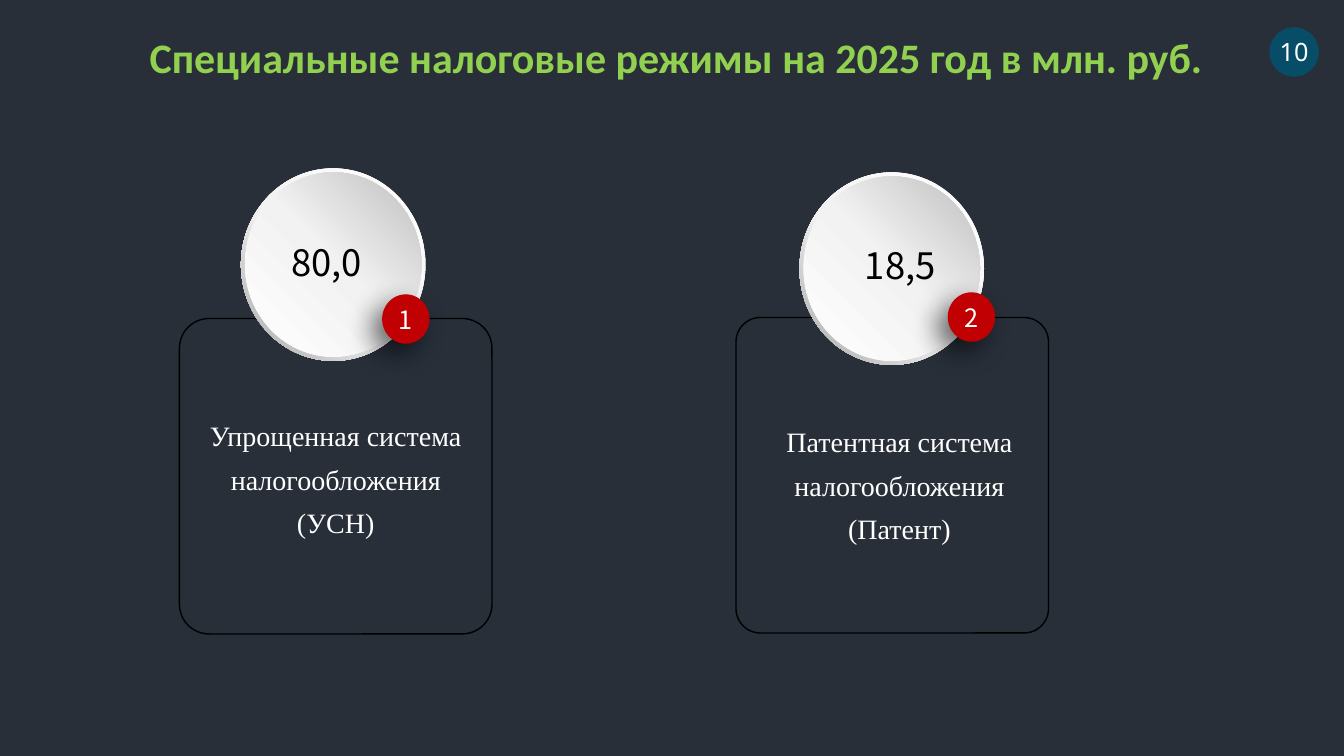
from lxml import etree
from pptx import Presentation
from pptx.dml.color import RGBColor
from pptx.enum.shapes import MSO_SHAPE as Shape
from pptx.enum.text import MSO_ANCHOR as Anchor, MSO_AUTO_SIZE as AutoSize, PP_ALIGN as Align
from pptx.oxml import parse_xml
from pptx.oxml.ns import nsdecls, qn
from pptx.util import Inches, Pt

# Content: each card has its figure, label and part positions (left, top) in inches
TITLE = "Специальные налоговые режимы на 2025 год в млн. руб."
PAGE_NUMBER = "10"
CARDS = [
    {"number": "1", "value": "80,0",
     "label": "Упрощенная система налогообложения (УСН)",
     "frame": (1.78, 3.16), "radius": 0.095, "medal": (2.39, 1.67),
     "badge": (3.79, 2.92), "figure": (2.79, 2.33), "caption": (1.94, 4.05)},
    {"number": "2", "value": "18,5",
     "label": "Патентная система налогообложения (Патент)",
     "frame": (7.3, 3.15), "radius": 0.078, "medal": (7.93, 1.71),
     "badge": (9.4, 2.9), "figure": (8.48, 2.36), "caption": (7.53, 4.11)},
]

# Sizes shared by both cards (width, height)
FRAME = (3.1, 3.13)
MEDAL = (1.83, 1.91)
RIM = 0.04
BADGE = (0.47, 0.49)
FIGURE = (1.04, 0.54)
CAPTION = (2.78, 1.31)

# Colours and gradients
BACKGROUND = RGBColor(0x28, 0x2F, 0x39)
GREEN = RGBColor(0x92, 0xD0, 0x50)
RED = RGBColor(0xC0, 0x00, 0x02)
TEAL = RGBColor(0x07, 0x4D, 0x67)
WHITE = RGBColor(0xFF, 0xFF, 0xFF)
BLACK = RGBColor(0x00, 0x00, 0x00)
PALE = RGBColor(0xF2, 0xF2, 0xF2)
SILVER = RGBColor(0xBF, 0xBF, 0xBF)
GREY = RGBColor(0xA6, 0xA6, 0xA6)
RIM_GRADIENT = ([(0, WHITE), (55, PALE), (100, GREY)], 135)
FACE_GRADIENT = ([(0, WHITE), (51, PALE), (100, SILVER)], 315)


def box_of(position, size):
    return [Inches(length) for length in (*position, *size)]


def add_plain(shapes, kind, position, size, fill=None):
    shape = shapes.add_shape(kind, *box_of(position, size))
    shape.shadow.inherit = False
    shape.line.fill.background()
    if fill is None:
        shape.fill.background()
    else:
        shape.fill.solid()
        shape.fill.fore_color.rgb = fill
    return shape


def set_gradient(shape, stops, angle):
    marks = "".join(f'<a:gs pos="{share * 1000}"><a:srgbClr val="{color}"/></a:gs>'
                    for share, color in stops)
    gradient = parse_xml(f'<a:gradFill {nsdecls("a")} rotWithShape="1"><a:gsLst>{marks}</a:gsLst>'
                         f'<a:lin ang="{angle * 60000}" scaled="0"/></a:gradFill>')
    properties = shape.fill._xPr
    properties.replace(properties.find(qn("a:noFill")), gradient)


def add_shadow(shape):
    effects = shape._element.spPr.find(qn("a:effectLst"))
    shadow = etree.SubElement(effects, qn("a:outerShdw"), blurRad=str(Pt(20)), dist=str(Pt(10)),
                              dir=str(135 * 60000), algn="tr", rotWithShape="0")
    color = etree.SubElement(shadow, qn("a:srgbClr"), val=str(BLACK))
    etree.SubElement(color, qn("a:alpha"), val="60000")


def write(shape, text, font, size, color, align=Align.CENTER, anchor=Anchor.MIDDLE,
          inset=0.0, spacing=None, bold=False):
    frame = shape.text_frame
    frame.text = text
    frame.word_wrap = True
    frame.auto_size = AutoSize.NONE
    frame.vertical_anchor = anchor
    frame.margin_left = frame.margin_right = Inches(inset)
    frame.margin_top = frame.margin_bottom = Inches(inset / 2)
    para = frame.paragraphs[0]
    para.alignment = align
    para.line_spacing = spacing
    span = para.runs[0]
    span.font.name = font
    span.font.size = Pt(size)
    span.font.bold = bold
    span.font.color.rgb = color


def add_medal(page, position):
    group = page.shapes.add_group_shape()
    rim = add_plain(group.shapes, Shape.DONUT, position, MEDAL)
    rim.adjustments[0] = 0.049
    set_gradient(rim, *RIM_GRADIENT)
    face = add_plain(group.shapes, Shape.OVAL, [start + RIM for start in position],
                     [length - 2 * RIM for length in MEDAL])
    set_gradient(face, *FACE_GRADIENT)


def add_card(page, card):
    frame = add_plain(page.shapes, Shape.ROUNDED_RECTANGLE, card["frame"], FRAME)
    frame.adjustments[0] = card["radius"]
    frame.line.color.rgb = BLACK
    frame.line.width = Pt(1)
    add_medal(page, card["medal"])

    badge = add_plain(page.shapes, Shape.OVAL, card["badge"], BADGE, RED)
    add_shadow(badge)
    write(badge, card["number"], "Noto Sans CJK SC", 18, WHITE)

    figure = page.shapes.add_textbox(*box_of(card["figure"], FIGURE))
    write(figure, card["value"], "Noto Sans CJK SC", 26, BLACK,
          align=Align.LEFT, anchor=Anchor.TOP, inset=0.1)
    caption = page.shapes.add_textbox(*box_of(card["caption"], CAPTION))
    write(caption, card["label"], "Times New Roman", 20, WHITE,
          anchor=Anchor.TOP, spacing=1.3)


def main():
    deck = Presentation()
    deck.slide_width, deck.slide_height = Inches(13.33), Inches(7.5)
    page = deck.slides.add_slide(deck.slide_layouts[5])
    page.background.fill.solid()
    page.background.fill.fore_color.rgb = BACKGROUND

    # Title
    title = page.shapes.title
    title.left, title.top, title.width, title.height = box_of((1.07, 0.26), (11.28, 0.61))
    write(title, TITLE, "Calibri", 30, GREEN, anchor=Anchor.TOP, inset=0.1, bold=True)

    # Cards
    for card in CARDS:
        add_card(page, card)

    # Page number
    marker = add_plain(page.shapes, Shape.OVAL, (12.59, 0.27), (0.49, 0.49), TEAL)
    write(marker, PAGE_NUMBER, "Noto Sans", 18, WHITE)
    marker.text_frame.word_wrap = False

    deck.save("out.pptx")


if __name__ == "__main__":
    main()
